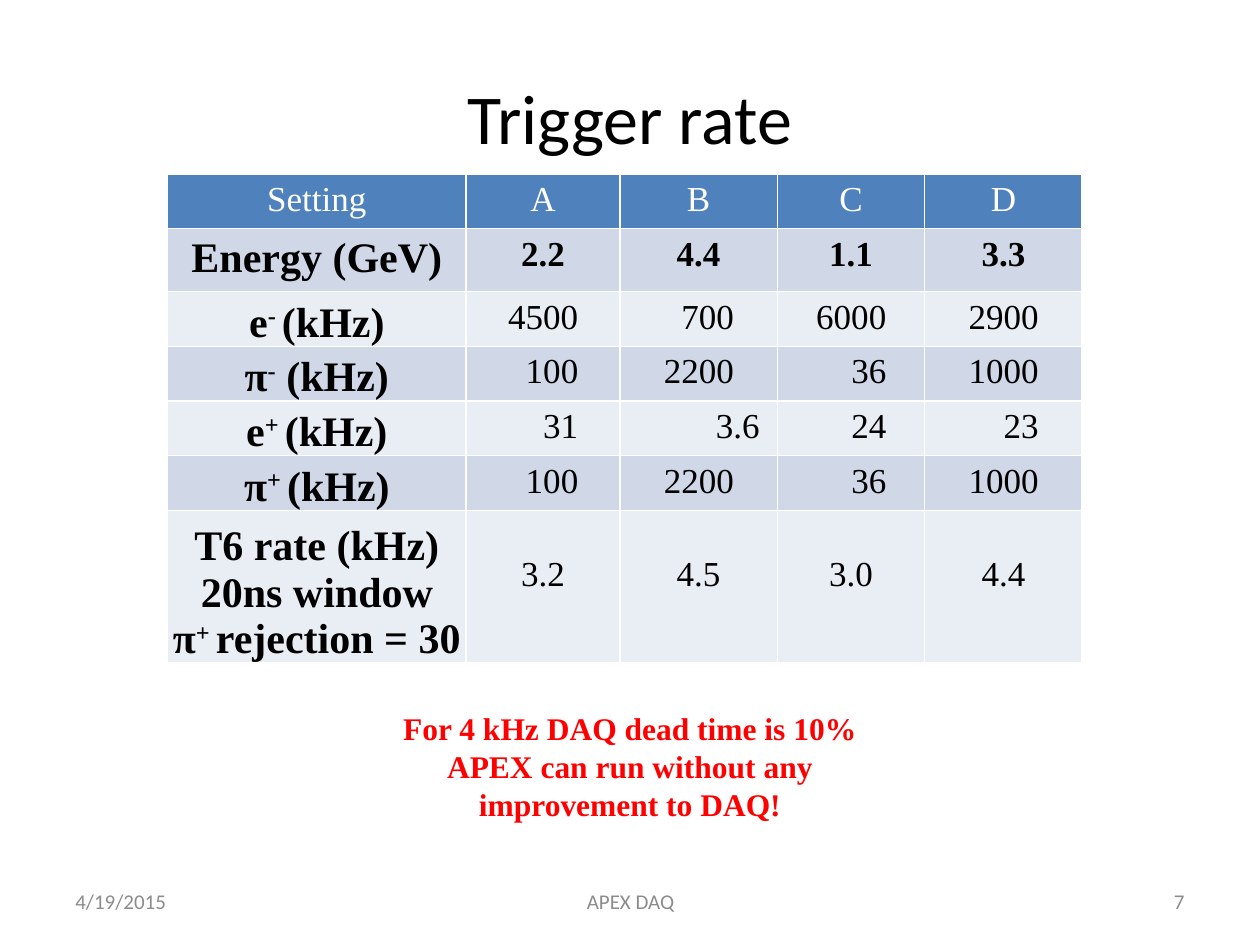
import pptx
import pptx.dml.color
import pptx.enum.text
import pptx.oxml
import pptx.oxml.ns
import pptx.util

Inches, Pt = pptx.util.Inches, pptx.util.Pt
ALIGN = pptx.enum.text.PP_ALIGN
ANCHOR = pptx.enum.text.MSO_ANCHOR

COLORS = {"ink": "000000", "white": "FFFFFF", "muted": "8C8C8C", "alert": "FF0000",
          "header": "4F81BD", "band": "D0D8E8", "light": "E9EDF4"}
SANS, SERIF = "Calibri", "Times New Roman"
WIDTH, HEIGHT = 10, 7.5

COL_WIDTHS = [2.37, 1.22, 1.25, 1.17, 1.25]
ROW_HEIGHTS = [0.43, 0.47, 0.41, 0.41, 0.41, 0.41, 1.11]
FOUR_DIGITS = 0.56  # width of a four-digit number at 20 pt

# Cell margins in inches: left, top, right, bottom
NORMAL = (0.1, 0.05, 0.1, 0.05)
TIGHT = (0.01, 0.01, 0.01, 0)
LOWERED = (0.1, 0.36, 0.1, 0.05)

# A label is a list of paragraphs; a paragraph alternates normal and raised text.
RATES = [
    ([["e", "- ", "(kHz)"]], ["4500", "700", "6000", "2900"]),
    ([["π", "-", " (kHz)"]], ["100", "2200", "36", "1000"]),
    ([["e", "+ ", "(kHz)"]], ["31", "3.6", "24", "23"]),
    ([["π", "+ ", "(kHz)"]], ["100", "2200", "36", "1000"]),
]
T6_LABEL = [["T6 rate (kHz)"], ["20ns window"], ["π", "+ ", "rejection = 30"]]
T6_RATES = ["3.2", "4.5", "3.0", "4.4"]


class Deck:
    def __init__(self):
        self.prs = pptx.Presentation()
        self.prs.slide_width, self.prs.slide_height = Inches(WIDTH), Inches(HEIGHT)
        self.s = self.prs.slides.add_slide(self.prs.slide_layouts[6])

    def add_runs(self, tf, paragraphs, size, color, font=SERIF, bold=False, align=ALIGN.CENTER):
        """Fill a text frame; every second run of a paragraph is superscript."""
        for i, runs in enumerate(paragraphs):
            p = tf.add_paragraph() if i else tf.paragraphs[0]
            p.alignment = align
            for j, text in enumerate(runs):
                r = p.add_run()
                r.text = text
                r.font.size, r.font.name, r.font.bold = Pt(size), font, bold
                r.font.color.rgb = pptx.dml.color.RGBColor.from_string(COLORS[color])
                if j % 2:
                    r._r.get_or_add_rPr().set("baseline", "30000")

    def text(self, x, y, w, h, paragraphs, size, color, anchor=ANCHOR.MIDDLE, **style):
        """Add a text box placed by shares of the slide's size."""
        sp = self.s.shapes.add_textbox(Inches(x * WIDTH), Inches(y * HEIGHT),
                                       Inches(w * WIDTH), Inches(h * HEIGHT))
        tf = sp.text_frame
        tf.word_wrap, tf.vertical_anchor = True, anchor
        self.add_runs(tf, paragraphs, size, color, **style)

    def table(self, x, y, col_widths, row_heights):
        frame = self.s.shapes.add_table(len(row_heights), len(col_widths),
                                        Inches(x * WIDTH), Inches(y * HEIGHT),
                                        Inches(sum(col_widths)), Inches(sum(row_heights)))
        table = frame.table
        for col, width in zip(table.columns, col_widths):
            col.width = Inches(width)
        for row, height in zip(table.rows, row_heights):
            row.height = Inches(height)
        return table

    def cell(self, table, row, col, paragraphs, size=20, color="ink", margins=NORMAL,
             anchor=ANCHOR.TOP, **style):
        cell = table.cell(row, col)
        (cell.margin_left, cell.margin_top,
         cell.margin_right, cell.margin_bottom) = map(Inches, margins)
        cell.vertical_anchor = anchor
        self.add_runs(cell.text_frame, paragraphs, size, color, **style)
        tc_pr = cell._tc.get_or_add_tcPr()
        for side in ("lnL", "lnR", "lnT", "lnB"):
            tc_pr.append(pptx.oxml.parse_xml(
                f'<a:{side} {pptx.oxml.ns.nsdecls("a")} w="12700"><a:solidFill>'
                f'<a:srgbClr val="{COLORS["white"]}"/></a:solidFill></a:{side}>'))
        fill = "header" if row == 0 else "band" if row % 2 else "light"
        cell.fill.solid()
        cell.fill.fore_color.rgb = pptx.dml.color.RGBColor.from_string(COLORS[fill])


def add_rate_table(deck):
    table = deck.table(0.133, 0.184, COL_WIDTHS, ROW_HEIGHTS)
    last = len(ROW_HEIGHTS) - 1

    for col, name in enumerate(["Setting", "A", "B", "C", "D"]):
        deck.cell(table, 0, col, [[name]], color="white")
    deck.cell(table, 1, 0, [["Energy (GeV)"]], size=24, bold=True)
    for col, energy in enumerate(["2.2", "4.4", "1.1", "3.3"], 1):
        deck.cell(table, 1, col, [[energy]], bold=True)

    for row, (label, _) in enumerate(RATES + [(T6_LABEL, T6_RATES)], 2):
        deck.cell(table, row, 0, label, size=24, bold=True, margins=TIGHT, anchor=ANCHOR.BOTTOM)
    for row, (_, rates) in enumerate(RATES, 2):
        for col, rate in enumerate(rates, 1):
            # Whole numbers share a right edge that centres four digits; decimals go beyond it.
            inset = 0.14 if "." in rate else (COL_WIDTHS[col] - FOUR_DIGITS) / 2
            deck.cell(table, row, col, [[rate]], margins=(0.1, 0.05, inset, 0.05),
                      align=ALIGN.RIGHT)
    for col, rate in enumerate(T6_RATES, 1):
        deck.cell(table, last, col, [[rate]], margins=LOWERED)


def main():
    deck = Deck()
    deck.text(0.05, 0.04, 0.9, 0.167, [["Trigger rate"]], 40, "ink", font=SANS)
    add_rate_table(deck)
    deck.text(0.3, 0.744, 0.4, 0.135,
              [["For 4 kHz DAQ dead time is 10%"],
               ["APEX can run without any improvement to DAQ!"]],
              18, "alert", anchor=ANCHOR.TOP, bold=True)
    for x, w, text, align in [(0.05, 0.233, "4/19/2015", ALIGN.LEFT),
                              (0.342, 0.317, "APEX DAQ", ALIGN.CENTER),
                              (0.717, 0.233, "7", ALIGN.RIGHT)]:
        deck.text(x, 0.927, w, 0.053, [[text]], 12, "muted", font=SANS, align=align)
    deck.prs.save("out.pptx")


if __name__ == "__main__":
    main()
